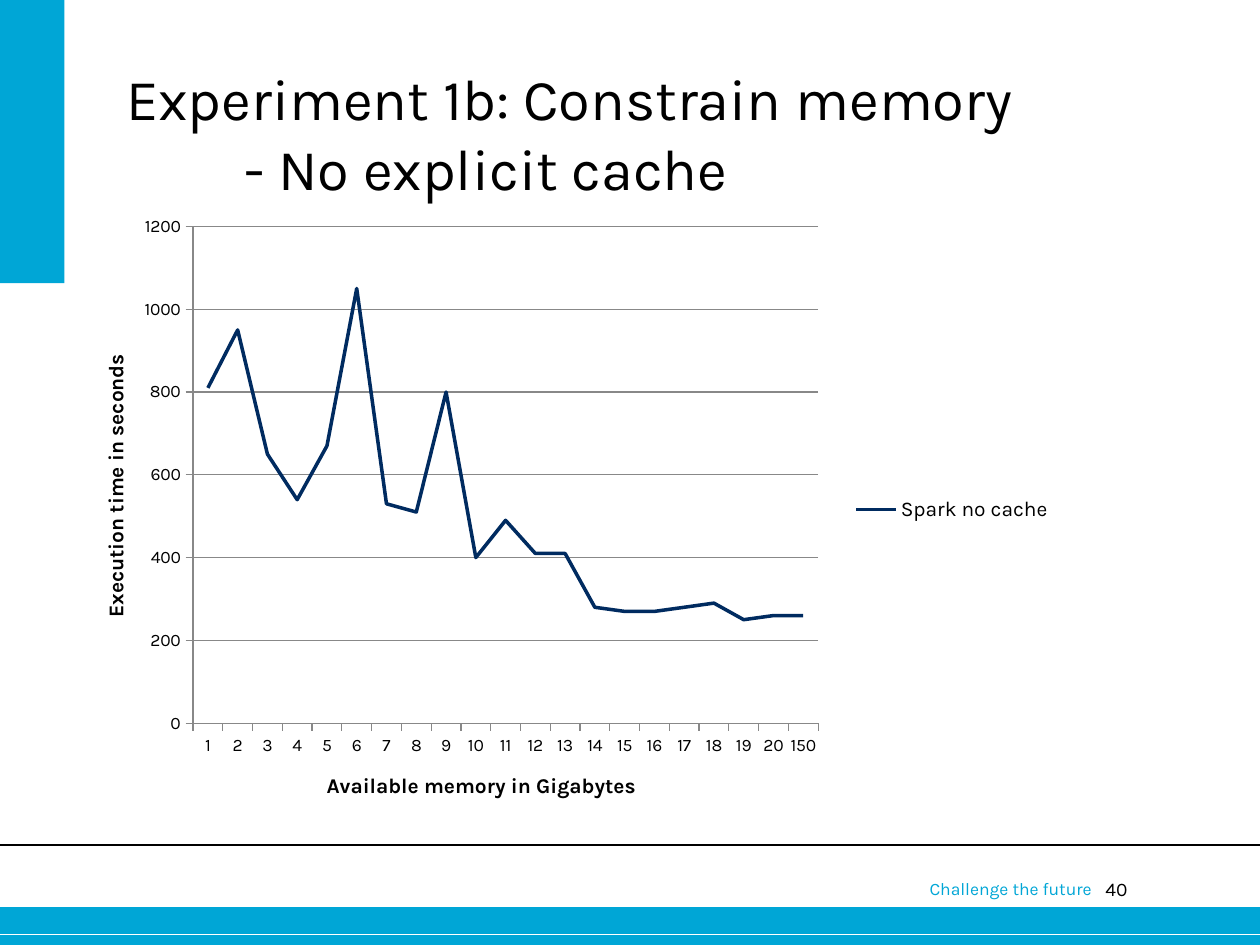
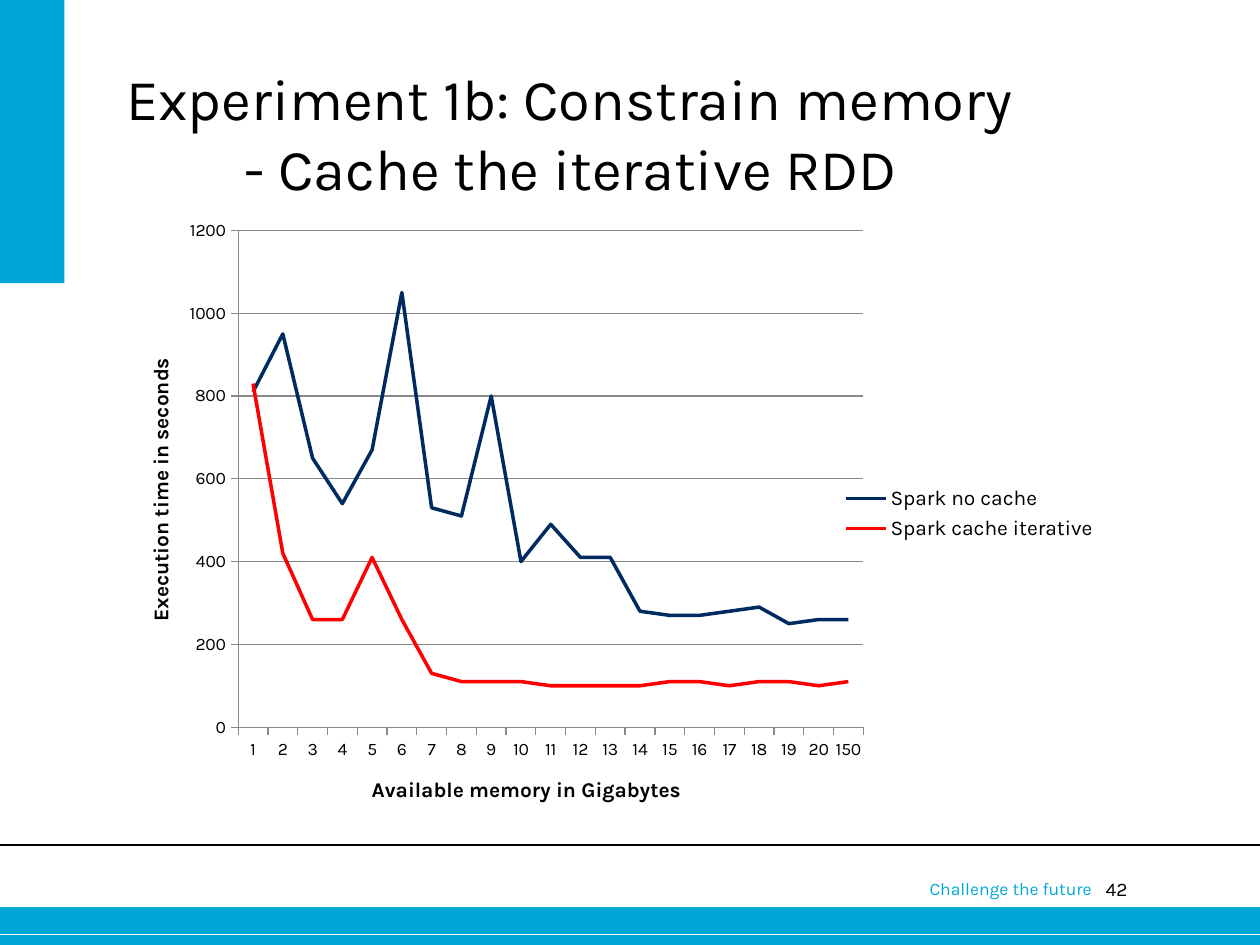
from dataclasses import dataclass
from typing import Optional

from lxml import etree
from pptx import Presentation
from pptx import util as u
from pptx.chart import data as chart_data
from pptx.dml import color
from pptx.enum import chart as charts
from pptx.enum import shapes, text
from pptx.oxml import ns


@dataclass(frozen=True)
class Theme:
    font: str = "Karla"
    cyan: str = "00A6D6"
    navy: str = "002B60"
    red: str = "FF0000"
    black: str = "000000"
    white: str = "FFFFFF"
    grid: str = "888888"
    title_size: float = 33
    number_size: float = 11
    label_size: float = 12
    small_size: float = 10
    series_width: float = 2
    axis_width: float = 0.75


@dataclass(frozen=True)
class Frame:
    left: float
    top: float
    width: float
    height: float

    def lengths(self) -> tuple:
        return tuple(u.Cm(v) for v in (self.left, self.top, self.width, self.height))


@dataclass(frozen=True)
class Band:
    frame: Frame
    fill: str


@dataclass(frozen=True)
class Rule:
    top: float
    colour: str
    width: float


@dataclass(frozen=True)
class Label:
    frame: Frame
    size: float
    colour: str
    align: text.PP_ALIGN
    inset: Optional[float] = None


@dataclass(frozen=True)
class Series:
    name: str
    values: tuple
    colour: str


@dataclass(frozen=True)
class Experiment:
    subtitle: str
    number: int
    chart_left: float
    chart_top: float
    series: tuple


THEME = Theme()
PAGE_WIDTH, PAGE_HEIGHT = 25.4, 19.05
CHART_WIDTH, CHART_HEIGHT = 19.51, 12.32
HEADING = "Experiment 1b: Constrain memory"
TITLE_FRAME = Frame(2.54, 1.27, 19.89, 1.75)
TITLE_INDENT = 2.39
MOTTO = "Challenge the future"
CATEGORY_TITLE = "Available memory in Gigabytes"
VALUE_TITLE = "Execution time in seconds"
PLOT = {"x": 0.099, "y": 0.037, "w": 0.646, "h": 0.813}

BOTTOM_BAND = Band(Frame(0, 18.29, PAGE_WIDTH, 0.76), THEME.cyan)
SIDE_BAND = Band(Frame(0, 0, 1.3, 5.71), THEME.cyan)
RULES = (Rule(18.84, THEME.white, 0.75), Rule(17.04, THEME.black, 1))
NUMBER_LABEL = Label(Frame(21.49, 17.68, 1.24, 0.71), THEME.number_size,
                     THEME.black, text.PP_ALIGN.RIGHT, 0)
MOTTO_LABEL = Label(Frame(18.49, 17.58, 4.06, 0.69), THEME.small_size,
                    THEME.cyan, text.PP_ALIGN.LEFT)

MEMORY = [str(size) for size in (*range(1, 21), 150)]
NO_CACHE = Series(
    "Spark no cache",
    (810, 950, 650, 540, 670, 1050, 530, 510, 800, 400, 490,
     410, 410, 280, 270, 270, 280, 290, 250, 260, 260),
    THEME.navy)
ITERATIVE = Series(
    "Spark cache iterative",
    (830, 420, 260, 260, 410, 260, 130, 110, 110, 110, 100,
     100, 100, 100, 110, 110, 100, 110, 110, 100, 110),
    THEME.red)
EXPERIMENTS = (
    Experiment("- No explicit cache", 40, 1.96, 4.11, (NO_CACHE,)),
    Experiment("- Cache the iterative RDD", 42, 2.87, 4.19, (NO_CACHE, ITERATIVE)),
)


def style_font(font, size: float, colour: str, bold: bool = False) -> None:
    font.name = THEME.font
    font.size = u.Pt(size)
    font.bold = bold
    font.color.rgb = color.RGBColor.from_string(colour)


def style_line(line, colour: str, width: float) -> None:
    line.color.rgb = color.RGBColor.from_string(colour)
    line.width = u.Pt(width)


def clear_insets(frame, inset: float) -> None:
    frame.margin_left = frame.margin_right = u.Cm(inset)
    frame.margin_top = frame.margin_bottom = u.Cm(inset)


def draw_band(page, band: Band) -> None:
    shape = page.shapes.add_shape(shapes.MSO_SHAPE.RECTANGLE, *band.frame.lengths())
    shape.shadow.inherit = False
    shape.fill.solid()
    shape.fill.fore_color.rgb = color.RGBColor.from_string(band.fill)
    shape.line.fill.background()


def draw_rule(page, rule: Rule) -> None:
    connector = page.shapes.add_connector(
        shapes.MSO_CONNECTOR.STRAIGHT,
        u.Cm(0), u.Cm(rule.top), u.Cm(PAGE_WIDTH), u.Cm(rule.top))
    style_line(connector.line, rule.colour, rule.width)
    etree.SubElement(connector._element.spPr, ns.qn("a:effectLst"))


def draw_label(page, label: Label, words: str) -> None:
    box = page.shapes.add_textbox(*label.frame.lengths())
    frame = box.text_frame
    frame.word_wrap = True
    if label.inset is not None:
        clear_insets(frame, label.inset)
    frame.text = words
    para = frame.paragraphs[0]
    para.alignment = label.align
    for span in para.runs:
        style_font(span.font, label.size, label.colour)


def draw_title(page, subtitle: str) -> None:
    title = page.shapes.title
    title.left, title.top, title.width, title.height = TITLE_FRAME.lengths()
    frame = title.text_frame
    frame.text = f"{HEADING}\v{subtitle}"
    frame.word_wrap = True
    frame.auto_size = text.MSO_AUTO_SIZE.NONE
    frame.vertical_anchor = text.MSO_ANCHOR.TOP
    clear_insets(frame, 0)
    para = frame.paragraphs[0]
    para.alignment = text.PP_ALIGN.LEFT
    properties = para._p.get_or_add_pPr()
    properties.set("marL", str(u.Cm(TITLE_INDENT)))
    properties.set("indent", str(-u.Cm(TITLE_INDENT)))
    for span in para.runs:
        style_font(span.font, THEME.title_size, THEME.black)


def style_axis(axis, title: str) -> None:
    axis.has_title = True
    frame = axis.axis_title.text_frame
    frame.text = title
    for span in frame.paragraphs[0].runs:
        style_font(span.font, THEME.label_size, THEME.black, bold=True)
    axis.major_tick_mark = charts.XL_TICK_MARK.OUTSIDE
    axis.minor_tick_mark = charts.XL_TICK_MARK.NONE
    style_font(axis.tick_labels.font, THEME.small_size, THEME.black)
    style_line(axis.format.line, THEME.grid, THEME.axis_width)


def place_plot(chart) -> None:
    area = chart._chartSpace.chart.plotArea
    for old in area.findall(ns.qn("c:layout")):
        area.remove(old)
    layout = etree.Element(ns.qn("c:layout"))
    manual = etree.SubElement(layout, ns.qn("c:manualLayout"))
    settings = {"layoutTarget": "inner", "xMode": "edge", "yMode": "edge", **PLOT}
    for tag, value in settings.items():
        etree.SubElement(manual, ns.qn(f"c:{tag}")).set("val", str(value))
    area.insert(0, layout)


def draw_chart(page, experiment: Experiment) -> None:
    data = chart_data.CategoryChartData()
    data.categories = MEMORY
    for series in experiment.series:
        data.add_series(series.name, series.values)
    frame = Frame(experiment.chart_left, experiment.chart_top, CHART_WIDTH, CHART_HEIGHT)
    chart = page.shapes.add_chart(
        charts.XL_CHART_TYPE.LINE, *frame.lengths(), data).chart
    style_font(chart.font, THEME.small_size, THEME.black)
    chart.has_title = False
    chart.has_legend = True
    chart.legend.position = charts.XL_LEGEND_POSITION.RIGHT
    chart.legend.include_in_layout = False
    style_font(chart.legend.font, THEME.label_size, THEME.black)
    style_axis(chart.category_axis, CATEGORY_TITLE)
    values = chart.value_axis
    style_axis(values, VALUE_TITLE)
    values.minimum_scale, values.maximum_scale, values.major_unit = 0, 1200, 200
    values.has_major_gridlines = True
    style_line(values.major_gridlines.format.line, THEME.grid, THEME.axis_width)
    plot = chart.plots[0]
    plot.vary_by_categories = False
    for drawn, series in zip(plot.series, experiment.series):
        drawn.smooth = False
        drawn.marker.style = charts.XL_MARKER_STYLE.NONE
        style_line(drawn.format.line, series.colour, THEME.series_width)
    place_plot(chart)


def draw_furniture(page, number: int) -> None:
    draw_band(page, BOTTOM_BAND)
    for rule in RULES:
        draw_rule(page, rule)
    draw_band(page, SIDE_BAND)
    draw_label(page, NUMBER_LABEL, str(number))
    draw_label(page, MOTTO_LABEL, MOTTO)


def main() -> None:
    deck = Presentation()
    deck.slide_width, deck.slide_height = u.Cm(PAGE_WIDTH), u.Cm(PAGE_HEIGHT)
    title_only = deck.slide_layouts.get_by_name("Title Only")
    for experiment in EXPERIMENTS:
        page = deck.slides.add_slide(title_only)
        draw_furniture(page, experiment.number)
        draw_chart(page, experiment)
        draw_title(page, experiment.subtitle)
    deck.save("out.pptx")


if __name__ == "__main__":
    main()
